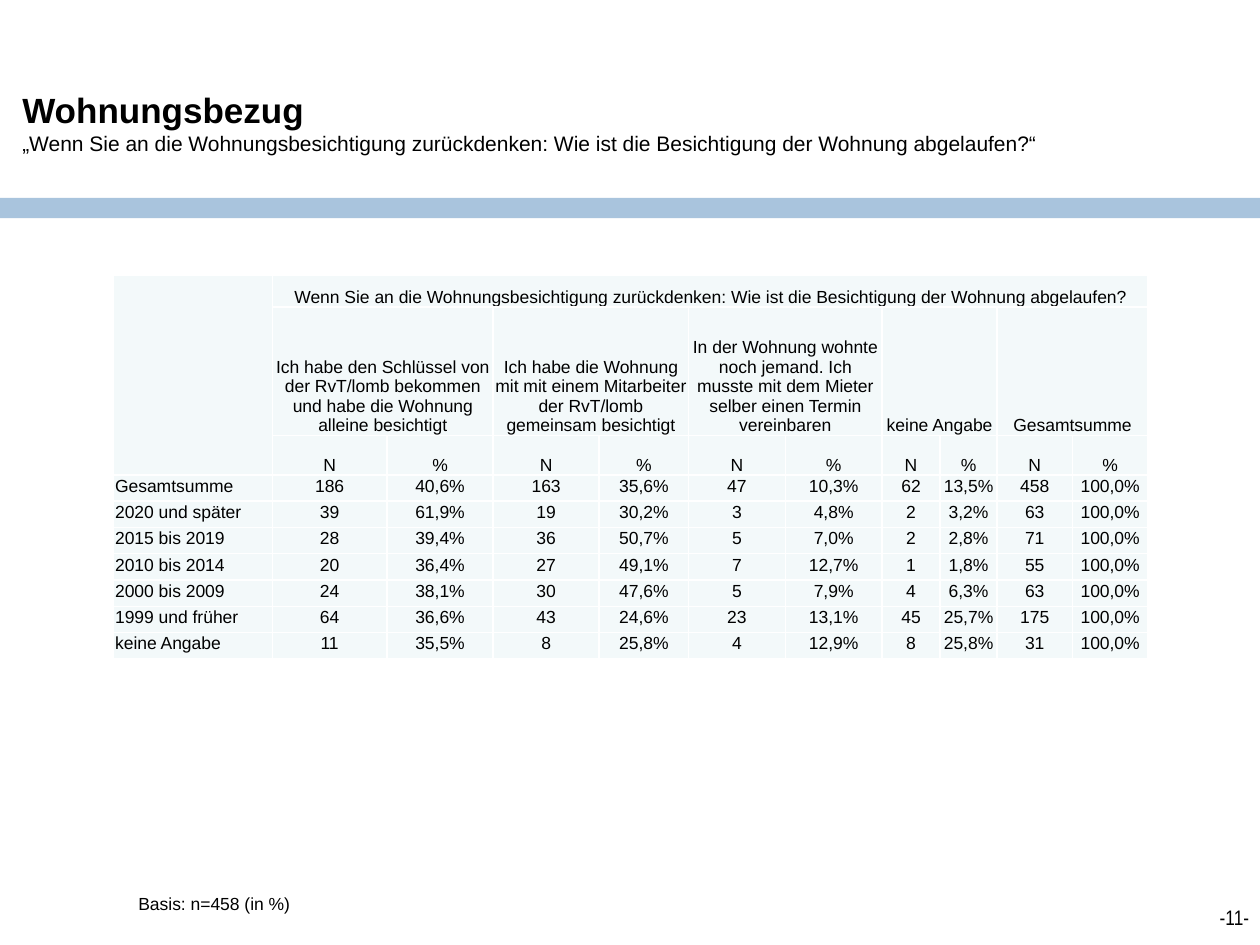
from lxml import etree
from pptx import Presentation, util as u
from pptx.dml import color
from pptx.enum import shapes, text
from pptx.oxml import ns

QUERY = "Wenn Sie an die Wohnungsbesichtigung zurückdenken: Wie ist die Besichtigung der Wohnung abgelaufen?"
HEADS = [
    "Ich habe den Schlüssel von der RvT/lomb bekommen und habe die Wohnung alleine besichtigt",
    "Ich habe die Wohnung mit mit einem Mitarbeiter der RvT/lomb gemeinsam besichtigt",
    "In der Wohnung wohnte noch jemand. Ich musste mit dem Mieter selber einen Termin vereinbaren",
    "keine Angabe",
    "Gesamtsumme",
]
DATA = [
    ("Gesamtsumme", "186 40,6% 163 35,6% 47 10,3% 62 13,5% 458 100,0%"),
    ("2020 und später", "39 61,9% 19 30,2% 3 4,8% 2 3,2% 63 100,0%"),
    ("2015 bis 2019", "28 39,4% 36 50,7% 5 7,0% 2 2,8% 71 100,0%"),
    ("2010 bis 2014", "20 36,4% 27 49,1% 7 12,7% 1 1,8% 55 100,0%"),
    ("2000 bis 2009", "24 38,1% 30 47,6% 5 7,9% 4 6,3% 63 100,0%"),
    ("1999 und früher", "64 36,6% 43 24,6% 23 13,1% 45 25,7% 175 100,0%"),
    ("keine Angabe", "11 35,5% 8 25,8% 4 12,9% 8 25,8% 31 100,0%"),
]
WIDTHS = [3.2, 2.31, 2.14, 2.14, 1.8, 1.95, 1.95, 1.17, 1.15, 1.52, 1.52]
HEIGHTS = [0.65, 2.59, 0.46] + [0.53] * len(DATA)
LEFT, MID, RIGHT = text.PP_ALIGN.LEFT, text.PP_ALIGN.CENTER, text.PP_ALIGN.RIGHT
TOP, CORE, BASE = text.MSO_ANCHOR.TOP, text.MSO_ANCHOR.MIDDLE, text.MSO_ANCHOR.BOTTOM


def tint(code):
    return color.RGBColor.from_string(code)


def apply(item, form):
    for key, value in form.items():
        setattr(item, key, value)


class Page:
    ink, pale, edge, band = "000000", "F3F9FA", "FFFFFF", "92B5D5"
    font = {"name": "Arial", "size": u.Pt(10), "bold": False}
    inset = {"margin_left": u.Cm(0.03), "margin_right": u.Cm(0.03),
             "margin_top": u.Cm(0.03), "margin_bottom": 0}

    def __init__(self, deck):
        self.slide = deck.slides.add_slide(deck.slide_layouts[6])

    def phrase(self, para, words, **form):
        run = para.add_run()
        run.text = words
        apply(run.font, {**self.font, **form})
        run.font.color.rgb = tint(self.ink)

    def label(self, box, runs, align=LEFT, **form):
        frame = self.slide.shapes.add_textbox(*map(u.Cm, box)).text_frame
        apply(frame, {"word_wrap": True, **form})
        para = frame.paragraphs[0]
        para.alignment = align
        for spot, (words, style) in enumerate(runs):
            if spot:
                para.add_line_break()
            self.phrase(para, words, **style)

    def bar(self, box, alpha):
        bar = self.slide.shapes.add_shape(shapes.MSO_SHAPE.RECTANGLE, *map(u.Cm, box))
        bar.shadow.inherit = False
        bar.line.fill.background()
        bar.fill.solid()
        bar.fill.fore_color.rgb = tint(self.band)
        tone = next(bar._element.spPr.iter(ns.qn("a:srgbClr")))
        etree.SubElement(tone, ns.qn("a:alpha"), val=str(alpha * 1000))

    def frame(self, cell):
        props = cell._tc.get_or_add_tcPr()
        for spot, side in enumerate(("lnL", "lnR", "lnT", "lnB")):
            line = etree.Element(ns.qn("a:" + side), w=str(int(u.Pt(1))))
            fill = etree.SubElement(line, ns.qn("a:solidFill"))
            etree.SubElement(fill, ns.qn("a:srgbClr"), val=self.edge)
            props.insert(spot, line)

    def grid(self, left, top, rows, spans):
        size = (sum(WIDTHS), sum(HEIGHTS))
        table = self.slide.shapes.add_table(
            len(rows), len(WIDTHS), *map(u.Cm, (left, top, *size))).table
        apply(table, {"first_row": False, "horz_banding": False})
        for col, width in zip(table.columns, WIDTHS):
            col.width = u.Cm(width)
        for row, height in zip(table.rows, HEIGHTS):
            row.height = u.Cm(height)
        for y, row in enumerate(rows):
            for x, words in enumerate(row):
                cell = table.cell(y, x)
                apply(cell, {**self.inset, "vertical_anchor": BASE if y < 3 else TOP})
                cell.fill.solid()
                cell.fill.fore_color.rgb = tint(self.pale)
                self.frame(cell)
                para = cell.text_frame.paragraphs[0]
                para.alignment = MID if x else LEFT
                self.phrase(para, words)
        for start, end in spans:
            table.cell(*start).merge(table.cell(*end))


def main():
    deck = Presentation()
    apply(deck, {"slide_width": u.Cm(25.4), "slide_height": u.Cm(19.05)})
    page = Page(deck)
    page.bar((0, 3.99, 25.43, 0.41), 79)
    page.label((19.51, 18.11, 5.92, 1.32),
               [("-11-", {"name": "Arial Narrow", "size": u.Pt(12)})], RIGHT)
    page.label((0.2, 0.81, 23.7, 3.3),
               [("Wohnungsbezug", {"size": u.Pt(20), "bold": True}),
                (f"„{QUERY}“", {"size": u.Pt(12)})], vertical_anchor=CORE)
    page.label((2.54, 17.88, 3.61, 0.69), [("Basis: n=458 (in %)", {})],
               word_wrap=False, auto_size=text.MSO_AUTO_SIZE.SHAPE_TO_FIT_TEXT)
    pairs = len(HEADS)
    rows = [["", QUERY] + [""] * (2 * pairs - 1),
            [""] + [word for head in HEADS for word in (head, "")],
            [""] + ["N", "%"] * pairs]
    rows += [[name] + values.split() for name, values in DATA]
    spans = [((0, 0), (2, 0)), ((0, 1), (0, 2 * pairs))]
    spans += [((1, x), (1, x + 1)) for x in range(1, 2 * pairs, 2)]
    page.grid(2.29, 5.54, rows, spans)
    deck.save("out.pptx")


if __name__ == "__main__":
    main()
